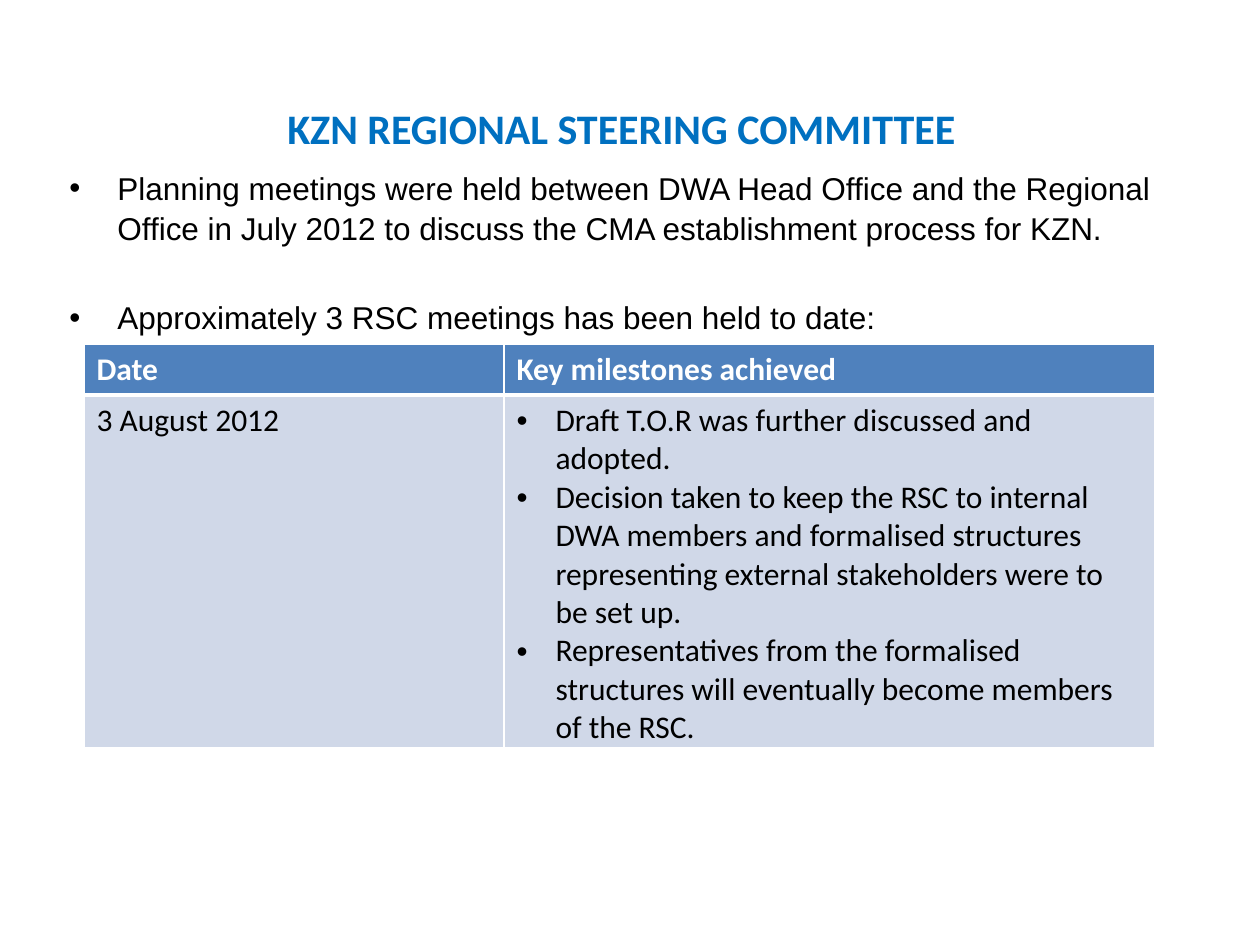
from lxml.etree import SubElement
from pptx import Presentation
from pptx.dml.color import RGBColor
from pptx.enum.text import PP_ALIGN
from pptx.oxml import parse_xml
from pptx.oxml.ns import nsdecls, qn
from pptx.util import Emu, Pt

COLORS = {
    "white": "FFFFFF",
    "black": "000000",
    "title": "0070C0",
    "head": "4F81BD",
    "body": "D0D8E8",
}
POINTS = [
    "Planning meetings were held between DWA Head Office and the Regional "
    "Office in July 2012 to discuss the CMA establishment process for KZN.",
    "Approximately 3 RSC meetings has been held to date:",
]
HEADS = ["Date", "Key milestones achieved"]
DATE = "3 August 2012"
STEPS = [
    "Draft T.O.R was further discussed and adopted.",
    "Decision taken to keep the RSC to internal DWA members and formalised "
    "structures representing external stakeholders were to be set up.",
    "Representatives from the formalised structures will eventually become "
    "members of the RSC.",
]


def px(count):
    return Emu(round(count * 914400 / 126))


def color(name):
    return RGBColor.from_string(COLORS[name])


def paint(item, name):
    item.fill.solid()
    item.fill.fore_color.rgb = color(name)


def write(frame, lines, font="Calibri", size=18, ink="black", bold=False,
          align=PP_ALIGN.LEFT, indent=0, gap=0, pitch=None):
    """Fill a frame with paragraphs; an indent in px also gives bullets."""
    frame.word_wrap = True
    for i, line in enumerate(lines):
        para = frame.add_paragraph() if i else frame.paragraphs[0]
        if indent:
            props = para._p.get_or_add_pPr()
            props.set("marL", str(px(indent)))
            props.set("indent", str(-px(indent)))
            SubElement(props, qn("a:buFont"), typeface="Arial")
            SubElement(props, qn("a:buChar"), char="•")
        para.alignment = align
        if pitch:
            para.line_spacing = pitch
        if i and gap:
            para.space_before = Pt(gap)
        run = para.add_run()
        run.text = line
        run.font.name = font
        run.font.size = Pt(size)
        run.font.bold = bold
        run.font.color.rgb = color(ink)


def add_text(slide, box, lines, **style):
    shape = slide.shapes.add_textbox(*map(px, box))
    paint(shape, "white")
    write(shape.text_frame, lines, **style)


def edge(cell, **widths):
    """Draw white cell borders; widths are points for L, R, T and B."""
    props = cell._tc.get_or_add_tcPr()
    for i, (side, width) in enumerate(widths.items()):
        props.insert(i, parse_xml(
            f'<a:ln{side} {nsdecls("a")} w="{Pt(width)}"><a:solidFill>'
            f'<a:srgbClr val="{COLORS["white"]}"/></a:solidFill></a:ln{side}>'))


def add_grid(slide, box, split, head):
    """Place the table; split is the first column, head the first row."""
    left, top, width, height = box
    table = slide.shapes.add_table(2, 2, *map(px, box)).table
    for col, size in zip(table.columns, (split, width - split)):
        col.width = px(size)
    for row, size in zip(table.rows, (head, height - head)):
        row.height = px(size)
    for c, text in enumerate(HEADS):
        cell = table.cell(0, c)
        paint(cell, "head")
        edge(cell, L=1, R=1, T=1, B=3)
        write(cell.text_frame, [text], ink="white", bold=True)
    for c, (lines, indent) in enumerate((([DATE], 0), (STEPS, 39))):
        cell = table.cell(1, c)
        paint(cell, "body")
        edge(cell, L=1, R=1, T=3, B=1)
        write(cell.text_frame, lines, indent=indent)


def main():
    deck = Presentation()
    deck.slide_width, deck.slide_height = px(1260), px(945)
    slide = deck.slides.add_slide(deck.slide_layouts[6])
    add_text(slide, (57, 161, 1159, 580), POINTS, font="Arial",
             indent=48, gap=28.5, pitch=1.05)
    add_text(slide, (130, 96, 983, 63), ["KZN REGIONAL STEERING COMMITTEE"],
             size=24, ink="title", bold=True, align=PP_ALIGN.CENTER)
    add_grid(slide, (84, 344, 1071, 404), split=420, head=51)
    deck.save("out.pptx")


if __name__ == "__main__":
    main()
